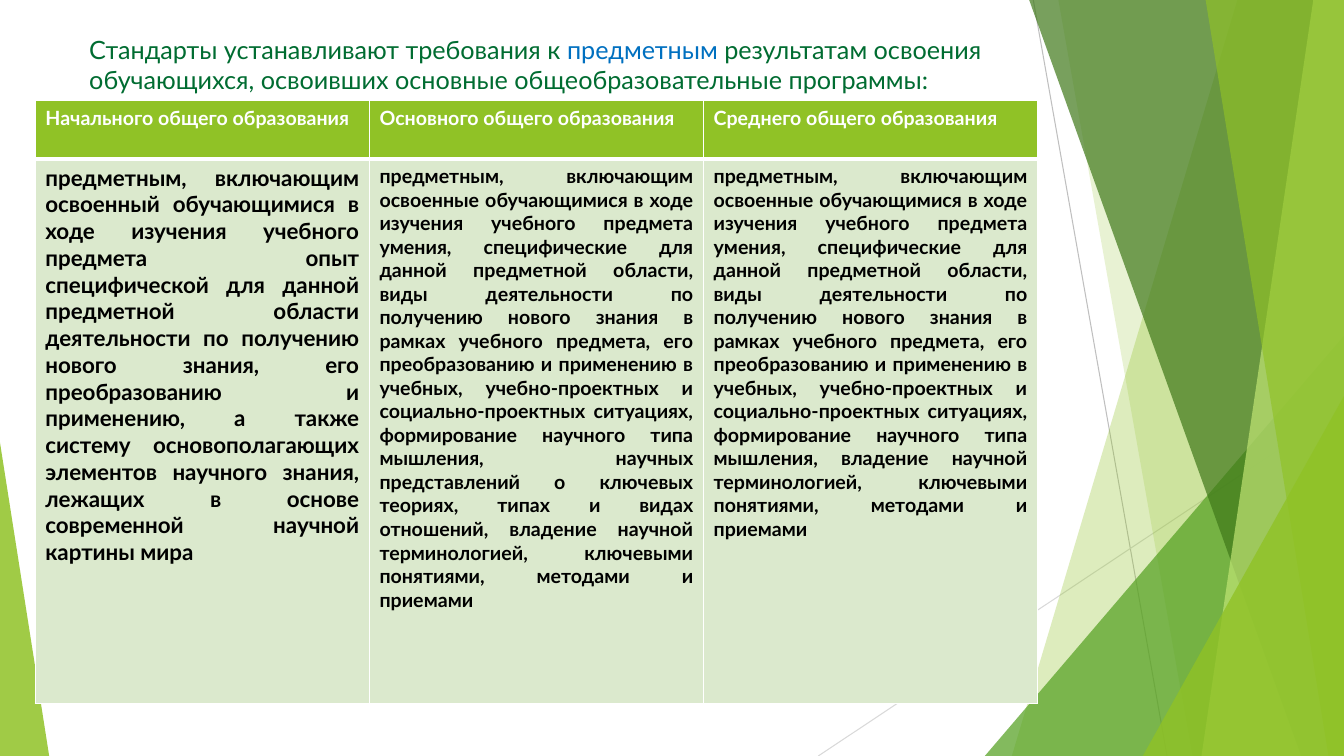
from dataclasses import dataclass

from lxml import etree
from pptx import Presentation
from pptx.dml.color import RGBColor
from pptx.enum.shapes import MSO_CONNECTOR, MSO_SHAPE
from pptx.enum.text import MSO_ANCHOR, PP_ALIGN
from pptx.oxml.ns import qn
from pptx.util import Cm, Pt

TRIANGLE = MSO_SHAPE.ISOSCELES_TRIANGLE
STRAIGHT = MSO_CONNECTOR.STRAIGHT
MIDDLE = MSO_ANCHOR.MIDDLE
LEFT, JUSTIFY = PP_ALIGN.LEFT, PP_ALIGN.JUSTIFY

WIDTH, HEIGHT = 33.87, 19.05
PANEL_TOP = -0.02
FONT = "Lato"
COLORS = {
    "lime": "90C226",
    "pale_lime": "C0E474",
    "green": "54A021",
    "dark_green": "3F7819",
    "title": "006C31",
    "accent": "0070C0",
    "body_fill": "DBE9CD",
    "white": "FFFFFF",
    "black": "000000",
    "gray": "BFBFBF",
    "light_gray": "D9D9D9",
}


@dataclass
class Ray:
    x1: float
    y1: float
    x2: float
    y2: float
    color: str


@dataclass
class Panel:
    top_x: float
    bottom_x: float
    color: str
    opacity: int


@dataclass
class Wedge:
    left: float
    top: float
    width: float
    apex: int
    color: str
    opacity: int


@dataclass
class Column:
    heading: str
    body: str
    size: int


RAYS = [
    Ray(26.04, 0, 29.41, HEIGHT, "gray"),
    Ray(WIDTH, 10.24, 20.62, HEIGHT, "light_gray"),
]
FACETS = [
    Panel(31.19, 25.5, "lime", 30),
    Panel(26.67, 30.05, "lime", 20),
    Wedge(24.82, 8.46, 9.05, 1, "green", 72),
    Panel(25.93, 32.79, "dark_green", 70),
    Panel(33.1, 30.28, "pale_lime", 70),
    Panel(30.38, 33.48, "lime", 65),
    Wedge(28.8, 9.98, 5.07, 1, "lime", 80),
    Wedge(0, 11.15, 1.24, 0, "lime", 85),
]
TITLE = [
    ("Стандарты устанавливают требования к ", "title"),
    ("предметным ", "accent"),
    ("результатам освоения обучающихся, освоивших основные "
     "общеобразовательные программы:", "title"),
]
SKILLS = (
    "предметным, включающим освоенные обучающимися в ходе изучения учебного "
    "предмета умения, специфические для данной предметной области, виды "
    "деятельности по получению нового знания в рамках учебного предмета, его "
    "преобразованию и применению в учебных, учебно-проектных и "
    "социально-проектных ситуациях, формирование научного типа мышления, "
)
TERMS = "владение научной терминологией, ключевыми понятиями, методами и приемами"
COLUMNS = [
    Column(
        "Начального общего образования",
        "предметным, включающим освоенный обучающимися в ходе изучения учебного "
        "предмета опыт специфической для данной предметной области деятельности "
        "по получению нового знания, его преобразованию и применению, а также "
        "систему основополагающих элементов научного знания, лежащих в основе "
        "современной научной картины мира",
        16,
    ),
    Column(
        "Основного общего образования",
        SKILLS + "научных представлений о ключевых теориях, типах и видах "
        "отношений, " + TERMS,
        14,
    ),
    Column("Среднего общего образования", SKILLS + TERMS, 14),
]


def rgb(name: str) -> RGBColor:
    return RGBColor.from_string(COLORS[name])


def draw_ray(slide, ray: Ray) -> None:
    s = slide.shapes.add_connector(
        STRAIGHT, Cm(ray.x1), Cm(ray.y1), Cm(ray.x2), Cm(ray.y2))
    s.line.color.rgb = rgb(ray.color)
    s.line.width = Pt(0.75)
    etree.SubElement(s._element.spPr, qn("a:effectLst"))


def draw_facet(slide, facet: Panel | Wedge) -> None:
    if isinstance(facet, Panel):
        builder = slide.shapes.build_freeform(Cm(facet.top_x), Cm(PANEL_TOP))
        builder.add_line_segments([
            (Cm(WIDTH), Cm(PANEL_TOP)),
            (Cm(WIDTH), Cm(HEIGHT)),
            (Cm(facet.bottom_x), Cm(HEIGHT)),
        ], close=True)
        s = builder.convert_to_shape()
    else:
        s = slide.shapes.add_shape(
            TRIANGLE, Cm(facet.left), Cm(facet.top),
            Cm(facet.width), Cm(HEIGHT - facet.top))
        s.adjustments[0] = facet.apex
    s.shadow.inherit = False
    s.line.fill.background()
    s.fill.solid()
    s.fill.fore_color.rgb = rgb(facet.color)
    color = s._element.spPr.find(qn("a:solidFill"))[0]
    etree.SubElement(color, qn("a:alpha"), val=str(facet.opacity * 1000))


def draw_title(slide) -> None:
    tf = slide.shapes.add_textbox(Cm(2), Cm(0.71), Cm(23.75), Cm(1.83)).text_frame
    tf.word_wrap = True
    tf.vertical_anchor = MIDDLE
    p = tf.paragraphs[0]
    p.font.name, p.font.size = FONT, Pt(18)
    for text, color in TITLE:
        r = p.add_run()
        r.text = text
        r.font.color.rgb = rgb(color)


def fill_cell(cell, text: str, size: int, color: str, fill: str,
              align: PP_ALIGN, bottom: int) -> None:
    tc_pr = cell._tc.get_or_add_tcPr()
    for side, width in (("L", 1), ("R", 1), ("T", 1), ("B", bottom)):
        ln = etree.SubElement(tc_pr, qn(f"a:ln{side}"), w=str(Pt(width)))
        solid = etree.SubElement(ln, qn("a:solidFill"))
        etree.SubElement(solid, qn("a:srgbClr"), val=COLORS["white"])
    cell.fill.solid()
    cell.fill.fore_color.rgb = rgb(fill)
    p = cell.text_frame.paragraphs[0]
    p.text = text
    p.alignment = align
    p.font.name, p.font.size, p.font.bold = FONT, Pt(size), True
    p.font.color.rgb = rgb(color)


def draw_table(slide) -> None:
    table = slide.shapes.add_table(
        2, len(COLUMNS), Cm(0.89), Cm(2.54), Cm(25.26), Cm(15.19)).table
    table.rows[0].height, table.rows[1].height = Cm(1.47), Cm(13.72)
    for i, column in enumerate(COLUMNS):
        table.columns[i].width = Cm(8.42)
        fill_cell(table.cell(0, i), column.heading, 14, "white", "lime", LEFT, 3)
        fill_cell(table.cell(1, i), column.body, column.size,
                  "black", "body_fill", JUSTIFY, 1)


def main() -> None:
    prs = Presentation()
    prs.slide_width, prs.slide_height = Cm(WIDTH), Cm(HEIGHT)
    slide = prs.slides.add_slide(prs.slide_layouts[6])
    for ray in RAYS:
        draw_ray(slide, ray)
    for facet in FACETS:
        draw_facet(slide, facet)
    draw_title(slide)
    draw_table(slide)
    prs.save("out.pptx")


if __name__ == "__main__":
    main()
